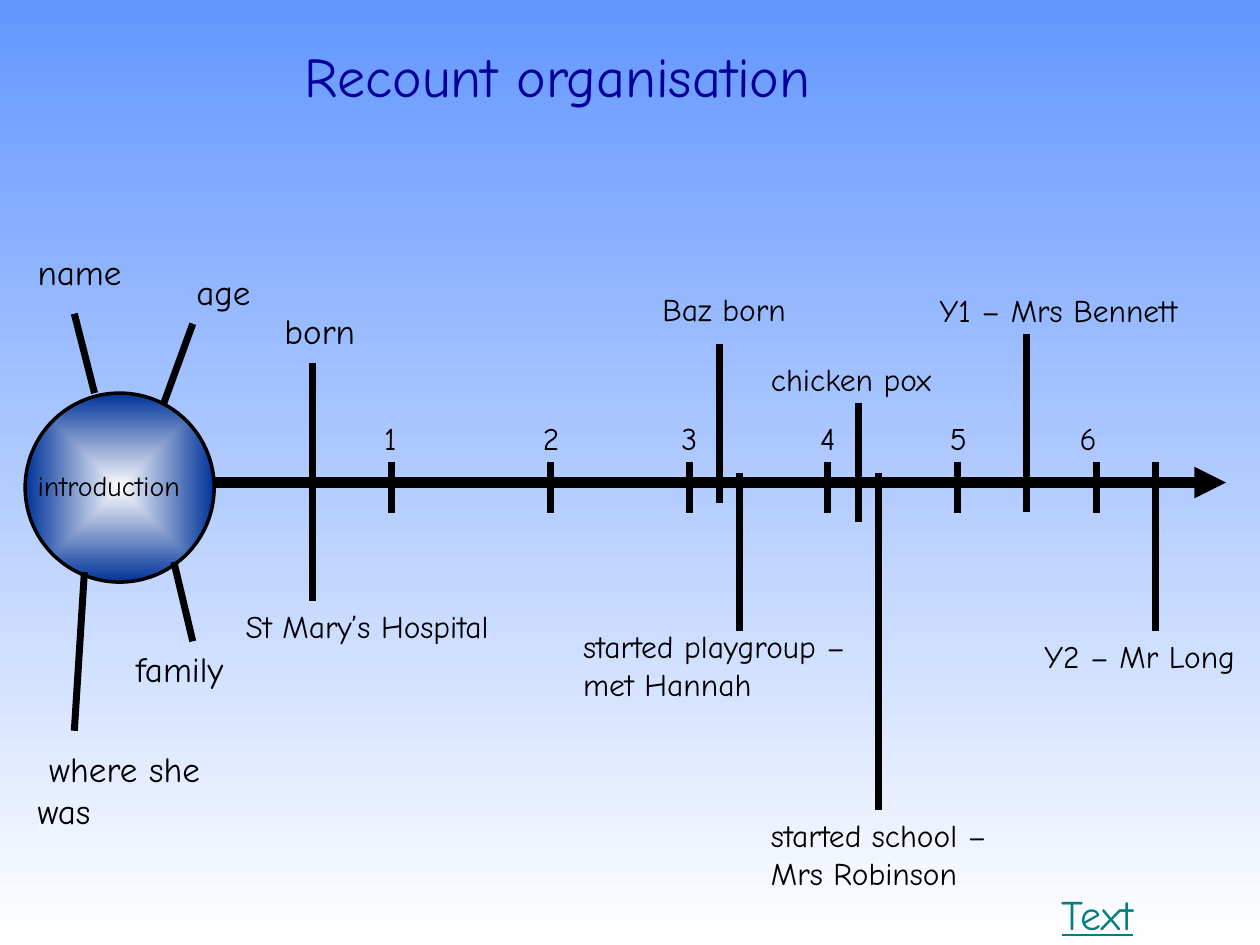
import pptx
import pptx.util
import pptx.dml.color
import pptx.enum.shapes
import pptx.enum.text
import pptx.oxml
import pptx.oxml.ns
import lxml.etree

Inches = pptx.util.Inches
qn = pptx.oxml.ns.qn


def tint(code):
    return pptx.dml.color.RGBColor.from_string(code)


def label(text, x, y, w, h, size=18, color="000000"):
    box = slide.shapes.add_textbox(Inches(x), Inches(y), Inches(w), Inches(h))
    frame = box.text_frame
    frame.text = text
    frame.word_wrap = True
    frame.auto_size = pptx.enum.text.MSO_AUTO_SIZE.SHAPE_TO_FIT_TEXT
    font = frame.paragraphs[0].runs[0].font
    font.name = "Comic Neue"
    font.size = pptx.util.Pt(size)
    font.color.rgb = tint(color)
    return font


deck = pptx.Presentation()
deck.slide_width, deck.slide_height = Inches(10), Inches(7.5)
slide = deck.slides.add_slide(deck.slide_layouts[6])

# Introduction hub
hub = slide.shapes.add_shape(
    pptx.enum.shapes.MSO_SHAPE.OVAL,
    Inches(0.2), Inches(3.12), Inches(1.5), Inches(1.5))
hub.shadow.inherit = False
hub.line.color.rgb = tint("000000")
hub.line.width = pptx.util.Pt(2)

# Gradients of the background and the hub
back = slide.background.fill
for fill, shades in ((back, ("6397FF", "FFFFFF")),
                     (hub.fill, ("FFFFFF", "003399"))):
    fill.gradient()
    for stop, shade in zip(fill.gradient_stops, shades):
        stop.color.rgb = tint(shade)
back.gradient_angle = 270

grad = hub._element.spPr.find(qn("a:gradFill"))
grad.remove(grad.find(qn("a:lin")))
glow = lxml.etree.SubElement(grad, qn("a:path"), path="shape")
lxml.etree.SubElement(glow, qn("a:fillToRect"),
                      l="50000", t="50000", r="50000", b="50000")

# Axis, year ticks, event marks and hub spokes
axis = (1.69, 3.83, 9.73, 3.83)
ticks = [3.11, 4.37, 5.47, 6.57, 7.6, 8.7]
marks = [
    (2.48, 2.88, 4.77),
    (5.71, 2.73, 3.99),
    (5.87, 3.75, 5.01),
    (6.81, 3.2, 4.14),
    (6.97, 3.75, 6.43),
    (8.15, 2.65, 4.06),
    (9.17, 3.67, 5.01),
]
spokes = [
    (0.75, 3.12, 0.59, 2.49),
    (1.3, 3.2, 1.53, 2.57),
    (0.59, 5.8, 0.67, 4.54),
    (1.53, 5.09, 1.38, 4.46),
]
uprights = marks + [(x, 3.67, 4.07) for x in ticks]
lines = [axis] + spokes + [(x, top, x, end) for x, top, end in uprights]
for ends in lines:
    line = slide.shapes.add_connector(
        pptx.enum.shapes.MSO_CONNECTOR.STRAIGHT, *map(Inches, ends))
    line.line.color.rgb = tint("000000")
    line.line.width = pptx.util.Pt(6 if ends == axis else 4)
    if ends == axis:
        lxml.etree.SubElement(line.line._get_or_add_ln(), qn("a:tailEnd"),
                              type="triangle")
    lxml.etree.SubElement(line._element.spPr, qn("a:effectLst"))

# Title and link
label("Recount organisation", 2.32, 0.28, 4.73, 0.63, 32, "000099")
label("Text", 8.33, 7, 1.42, 0.5, 24, "008080").underline = True

# Year numbers
for year, x in enumerate(ticks, 1):
    nudge = 0.23 if year == 6 else 0.16
    label(str(year), x - nudge, 3.28, 1.02, 0.4)

# Topics of the introduction
label("introduction", 0.2, 3.67, 1.69, 0.37, 16)
for text, x, y, w, h in (
    ("name", 0.2, 1.94, 0.87, 0.43),
    ("age", 1.46, 2.1, 1.34, 0.43),
    ("family", 0.98, 5.09, 1.1, 0.43),
    (" where she was", 0.2, 5.88, 1.5, 0.77),
    ("born", 2.16, 2.41, 1.5, 0.43),
):
    label(text, x, y, w, h, 20)

# Events
for text, x, y, w, h in (
    ("St Mary’s Hospital", 1.85, 4.77, 3.39, 0.4),
    ("Baz born", 5.16, 2.25, 2.6, 0.4),
    ("started playgroup – met Hannah", 4.53, 4.93, 2.36, 0.7),
    ("chicken pox", 6.02, 2.81, 1.73, 0.4),
    ("started school – Mrs Robinson", 6.02, 6.43, 2.05, 0.7),
    ("Y1 – Mrs Bennett", 7.36, 2.26, 2.2, 0.4),
    ("Y2 – Mr Long", 8.19, 5.01, 1.81, 0.4),
):
    label(text, x, y, w, h)

deck.save("out.pptx")
